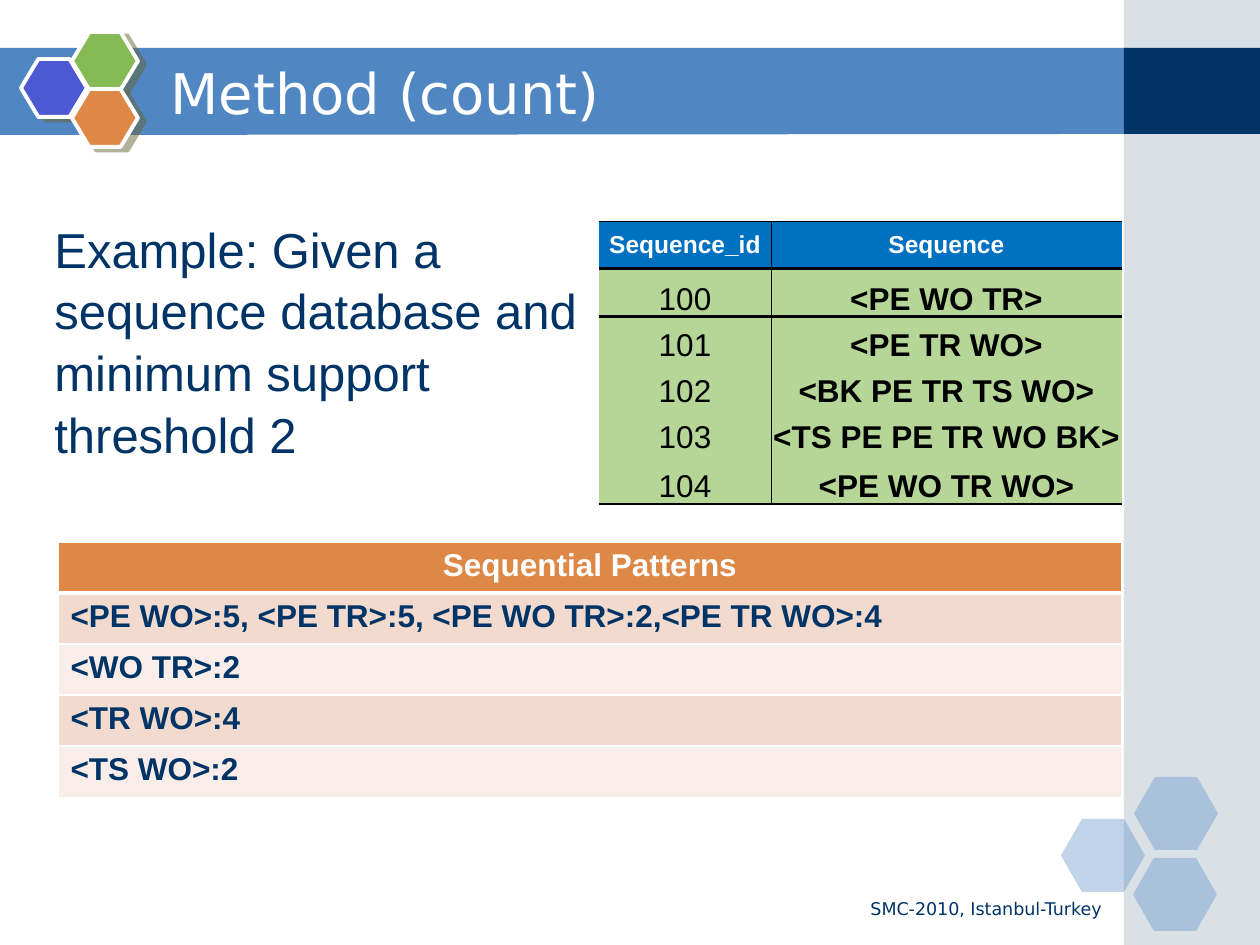
from dataclasses import dataclass, field, replace

import pptx
import pptx.dml.color
import pptx.enum.shapes
import pptx.enum.text
import pptx.oxml
import pptx.oxml.ns
import pptx.util

PX = 914400 // 126
SHAPE = pptx.enum.shapes.MSO_SHAPE
ALIGN = pptx.enum.text.PP_ALIGN
ANCHOR = pptx.enum.text.MSO_ANCHOR
NO_GRID = "{2D5ABB26-0587-4C30-8999-92F81FD0307C}"


@dataclass(frozen=True)
class Theme:
    sans: str = "Arial"
    display: str = "DejaVu Sans"
    title: int = 32
    body: int = 28
    cell: int = 18
    head: int = 14
    foot: int = 10
    white: str = "FFFFFF"
    black: str = "000000"
    navy: str = "003366"
    band: str = "5086C2"
    side: str = "A0B5C4"
    violet: str = "4C59D2"
    green: str = "85BA54"
    orange: str = "DE8848"
    shadow: str = "666633"
    head_blue: str = "0070C0"
    pale_green: str = "B6D698"
    rose: str = "F2DACF"
    pale_rose: str = "F9EDE9"


@dataclass(frozen=True)
class Cell:
    fill: str
    color: str
    size: int = 18
    bold: bool = True
    align: ALIGN = ALIGN.LEFT
    anchor: ANCHOR = ANCHOR.TOP
    inset: tuple = None
    borders: dict = field(default_factory=dict)  # side: (colour, points)


def rgb(color):
    return pptx.dml.color.RGBColor.from_string(color)


def xml(text):
    return pptx.oxml.parse_xml(text.replace(">", f" {pptx.oxml.ns.nsdecls('a')}>", 1))


class Deck:
    def __init__(self, prs, theme):
        self.theme = theme
        self.s = prs.slides.add_slide(prs.slide_layouts[6])

    def paint(self, sp, fill, alpha=None, line=None):
        sp.shadow.inherit = False
        sp.fill.solid()
        sp.fill.fore_color.rgb = rgb(fill)
        if alpha:
            color = sp.fill._xPr.find(".//" + pptx.oxml.ns.qn("a:srgbClr"))
            color.append(xml(f'<a:alpha val="{alpha * 1000}"></a:alpha>'))
        if line:
            sp.line.color.rgb = rgb(line)
            sp.line.width = pptx.util.Pt(2.25)
        else:
            sp.line.fill.background()

    def polygon(self, points, fill):
        builder = self.s.shapes.build_freeform(*points[0], scale=PX)
        builder.add_line_segments(points[1:], close=True)
        self.paint(builder.convert_to_shape(), fill)

    def shape(self, kind, x, y, w, h, fill, alpha=None, line=None):
        sp = self.s.shapes.add_shape(kind, x * PX, y * PX, w * PX, h * PX)
        self.paint(sp, fill, alpha, line)
        return sp

    def hexagon(self, x, y, w, h, adj, fill, alpha=None, line=None):
        sp = self.shape(SHAPE.HEXAGON, x, y, w, h, fill, alpha, line)
        sp.adjustments[0] = adj
        return sp

    def drop_shadow(self, sp):
        effects = sp._element.spPr.find(pptx.oxml.ns.qn("a:effectLst"))
        effects.append(xml(
            f'<a:outerShdw dist="{pptx.util.Pt(4.5)}" dir="{27 * 60000}" algn="ctr" rotWithShape="0">'
            f'<a:srgbClr val="{self.theme.shadow}"><a:alpha val="50000"/></a:srgbClr></a:outerShdw>'))

    def run(self, p, text, size, font, color, bold=False):
        r = p.add_run()
        r.text = text
        r.font.size = pptx.util.Pt(size)
        r.font.name = font
        r.font.bold = bold
        r.font.color.rgb = rgb(color)

    def text(self, x, y, w, h, text, size, font, color,
             align=ALIGN.LEFT, anchor=ANCHOR.TOP, spacing=None):
        tf = self.s.shapes.add_textbox(x * PX, y * PX, w * PX, h * PX).text_frame
        tf.word_wrap = True
        tf.vertical_anchor = anchor
        p = tf.paragraphs[0]
        p.alignment = align
        p.line_spacing = spacing
        self.run(p, text, size, font, color)

    def table(self, x, y, cols, rows, data, style):
        """Fill a table; style(row, col) gives the Cell look."""
        frame = self.s.shapes.add_table(
            len(rows), len(cols), x * PX, y * PX, sum(cols) * PX, sum(rows) * PX)
        tbl = frame.table
        tbl.horz_banding = False
        tbl._tbl.tblPr.find(pptx.oxml.ns.qn("a:tableStyleId")).text = NO_GRID
        for col, width in zip(tbl.columns, cols):
            col.width = width * PX
        for i, (height, values) in enumerate(zip(rows, data)):
            tbl.rows[i].height = height * PX
            for j, value in enumerate(values):
                self.cell(tbl.cell(i, j), value, style(i, j))

    def cell(self, cell, text, look):
        cell.fill.solid()
        cell.fill.fore_color.rgb = rgb(look.fill)
        cell.vertical_anchor = look.anchor
        if look.inset:
            (cell.margin_left, cell.margin_top, cell.margin_right,
             cell.margin_bottom) = [n * PX for n in look.inset]
        sides = [side for side in "LRTB" if side in look.borders]
        for i, side in enumerate(sides):
            color, width = look.borders[side]
            cell._tc.get_or_add_tcPr().insert(i, xml(
                f'<a:ln{side} w="{pptx.util.Pt(width)}"><a:solidFill>'
                f'<a:srgbClr val="{color}"/></a:solidFill></a:ln{side}>'))
        p = cell.text_frame.paragraphs[0]
        p.alignment = look.align
        self.run(p, text, look.size, self.theme.sans, look.color, look.bold)


def main():
    t = Theme()
    prs = pptx.Presentation()
    prs.slide_width, prs.slide_height = 1260 * PX, 945 * PX
    deck = Deck(prs, t)

    # Title band and side column
    deck.polygon([(-1, 48), (1128, 48), (1128, 134), (-1, 135)], t.band)
    deck.shape(SHAPE.RECTANGLE, 1124, 0, 136, 945, t.side, alpha=40)
    deck.shape(SHAPE.RECTANGLE, 1124, 48, 136, 86, t.navy)

    # Hexagon clusters
    for x, y in [(1061, 819), (1134, 777), (1133, 858)]:
        deck.hexagon(x, y, 84, 73, 0.286, t.band, alpha=35)
    for x, y, color in [(21, 59, t.violet), (72, 32, t.green), (72, 89, t.orange)]:
        deck.drop_shadow(deck.hexagon(x, y, 66, 58, 0.3, color, line=t.white))

    # Title, footer and body text
    deck.text(158, 53, 924, 78, "Method (count)", t.title, t.display, t.white,
              anchor=ANCHOR.MIDDLE)
    deck.text(714, 892, 400, 33, "SMC-2010, Istanbul-Turkey", t.foot, t.display, t.navy,
              align=ALIGN.RIGHT)
    deck.text(42, 210, 577, 251,
              "Example: Given a sequence database and minimum support threshold 2",
              t.body, t.sans, t.navy, spacing=1.05)

    # Sequence database
    sequences = ["<PE WO TR>", "<PE TR WO>", "<BK PE TR TS WO>",
                 "<TS PE PE TR WO BK>", "<PE WO TR WO>"]
    database = [("Sequence_id", "Sequence")]
    database += [(str(100 + i), seq) for i, seq in enumerate(sequences)]
    db_body = Cell(t.pale_green, t.black, t.cell, align=ALIGN.CENTER,
                   anchor=ANCHOR.BOTTOM, inset=(1, 1, 1, 0))
    db_head = replace(db_body, fill=t.head_blue, color=t.white, size=t.head,
                      anchor=ANCHOR.MIDDLE)

    def database_style(row, col):
        borders = {"L" if col else "R": (t.black, 0.5)}
        if row == 0:
            borders.update(T=(t.black, 0.5), B=(t.black, 2))
            return replace(db_head, borders=borders)
        if row == 1:
            borders["T"] = (t.black, 2)
        if row == len(sequences):
            borders["B"] = (t.black, 1)
        return replace(db_body, bold=col == 1, borders=borders)

    deck.table(599, 221, [172, 351], [48, 48, 46, 46, 46, 49], database, database_style)

    # Sequential patterns
    patterns = ["Sequential Patterns",
                "<PE WO>:5, <PE TR>:5, <PE WO TR>:2,<PE TR WO>:4",
                "<WO TR>:2", "<TR WO>:4", "<TS WO>:2"]
    grid = {side: (t.white, 1) for side in "LRTB"}

    def pattern_style(row, col):
        if row == 0:
            return Cell(t.orange, t.white, t.cell, align=ALIGN.CENTER,
                        borders={**grid, "B": (t.white, 3)})
        return Cell(t.rose if row % 2 else t.pale_rose, t.navy, t.cell, borders=grid)

    deck.table(58, 542, [1064], [51, 51, 51, 51, 52], [[p] for p in patterns], pattern_style)

    prs.save("out.pptx")


if __name__ == "__main__":
    main()
